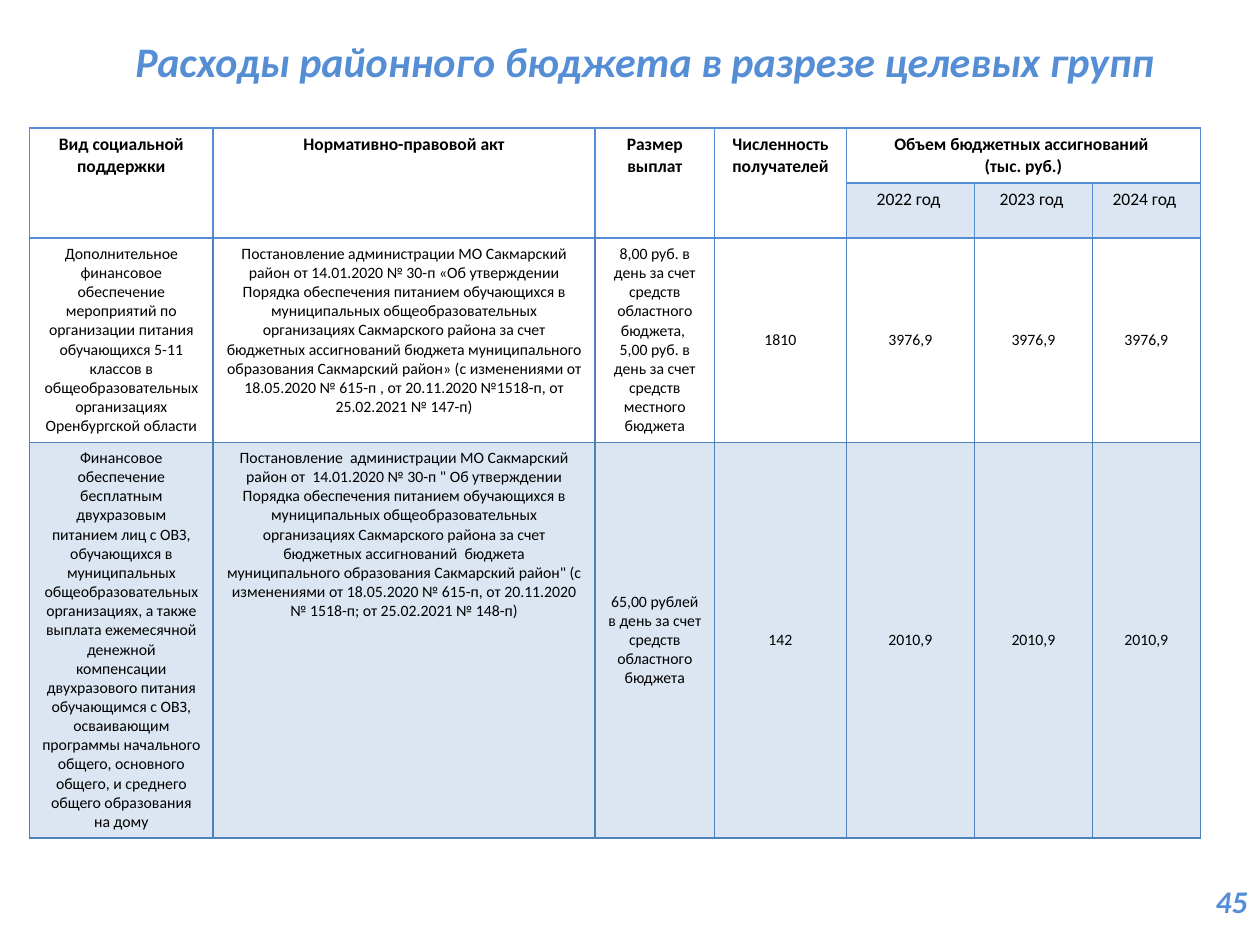
from lxml import etree
from pptx import Presentation
from pptx.dml.color import RGBColor
from pptx.enum import text
from pptx.oxml import ns
from pptx.util import Pt

ACCENT = RGBColor(0x55, 0x8E, 0xD5)
GRID = RGBColor(0x4F, 0x81, 0xBD)
BAND = RGBColor(0xDC, 0xE6, 0xF2)
BLACK = RGBColor(0, 0, 0)
TOP, MIDDLE = text.MSO_ANCHOR.TOP, text.MSO_ANCHOR.MIDDLE
CENTER, RIGHT = text.PP_ALIGN.CENTER, text.PP_ALIGN.RIGHT


def write(frame, content, size=10, color=BLACK, bold=False, italic=False,
          align=CENTER, anchor=TOP):
    frame.text = content
    frame.vertical_anchor = anchor
    for paragraph in frame.paragraphs:
        paragraph.alignment = align
        for run in paragraph.runs:
            font = run.font
            font.name, font.size = "Calibri", Pt(size)
            font.bold, font.italic = bold, italic
            font.color.rgb = color


def draw_borders(cell, color, top_color):
    properties = cell._tc.get_or_add_tcPr()
    sides = [("lnL", color), ("lnR", color), ("lnT", top_color), ("lnB", color)]
    for position, (side, side_color) in enumerate(sides):
        line = etree.Element(ns.qn(f"a:{side}"), w=str(Pt(1)))
        fill = etree.SubElement(line, ns.qn("a:solidFill"))
        etree.SubElement(fill, ns.qn("a:srgbClr"), val=str(side_color))
        properties.insert(position, line)


deck = Presentation()
deck.slide_width, deck.slide_height = Pt(720), Pt(540)
slide = deck.slides.add_slide(deck.slide_layouts[5])

# Title
title = slide.shapes.title
title.left, title.top, title.width, title.height = Pt(67.5), Pt(16.5), Pt(602), Pt(36)
write(title.text_frame, "Расходы районного бюджета в разрезе целевых групп",
      size=24, color=ACCENT, bold=True, italic=True, anchor=MIDDLE)
title.text_frame.word_wrap = False
title.text_frame.auto_size = text.MSO_AUTO_SIZE.NONE

# Table contents
headings = ["Вид социальной поддержки", "Нормативно-правовой акт", "Размер выплат",
            "Численность получателей", "Объем бюджетных ассигнований \n(тыс. руб.)"]
years = ["2022 год ", "2023 год ", "2024 год "]
measures = [
    ["Дополнительное финансовое обеспечение мероприятий по организации питания "
     "обучающихся 5-11 классов в общеобразовательных организациях Оренбургской области",
     "Постановление администрации МО Сакмарский район от 14.01.2020 № 30-п "
     "«Об утверждении Порядка обеспечения питанием обучающихся в муниципальных "
     "общеобразовательных организациях Сакмарского района за счет бюджетных "
     "ассигнований бюджета муниципального образования Сакмарский район» "
     "(с изменениями от 18.05.2020 № 615-п , от 20.11.2020 №1518-п, "
     "от 25.02.2021 № 147-п)",
     "8,00 руб. в день за счет средств областного бюджета, \n"
     "5,00 руб. в день за счет средств местного бюджета",
     "1810"] + ["3976,9"] * 3,
    ["Финансовое обеспечение бесплатным двухразовым питанием лиц с ОВЗ, обучающихся "
     "в муниципальных общеобразовательных организациях, а также выплата ежемесячной "
     "денежной компенсации двухразового питания обучающимся с ОВЗ, осваивающим "
     "программы начального общего, основного общего, и среднего общего образования "
     "на дому",
     "Постановление  администрации МО Сакмарский район от  14.01.2020 № 30-п "
     "\" Об утверждении Порядка обеспечения питанием обучающихся в муниципальных "
     "общеобразовательных организациях Сакмарского района за счет бюджетных "
     "ассигнований  бюджета муниципального образования Сакмарский район\" "
     "(с изменениями от 18.05.2020 № 615-п, от 20.11.2020 № 1518-п; "
     "от 25.02.2021 № 148-п)",
     "65,00 рублей в день за счет средств областного бюджета",
     "142"] + ["2010,9"] * 3,
]

# Table grid
widths = [104.8, 218.3, 68.3, 75.4, 73.2, 67.4, 61.7]
heights = [31.4, 31.4, 116.6, 226.2]
support = slide.shapes.add_table(len(heights), len(widths), Pt(16.9), Pt(73.1),
                                 Pt(sum(widths)), Pt(sum(heights))).table
for column, width in zip(support.columns, widths):
    column.width = Pt(width)
for row, height in zip(support.rows, heights):
    row.height = Pt(height)

# Fills and borders
for r in range(len(heights)):
    for c in range(len(widths)):
        cell = support.cell(r, c)
        if r == 3 or (r == 1 and c >= 4):
            cell.fill.solid()
            cell.fill.fore_color.rgb = BAND
        else:
            cell.fill.background()
        draw_borders(cell, ACCENT if r < 2 else GRID, ACCENT if r < 3 else GRID)

# Header rows
for c, heading in enumerate(headings):
    if c < 4:
        support.cell(0, c).merge(support.cell(1, c))
    write(support.cell(0, c).text_frame, heading, bold=True)
support.cell(0, 4).merge(support.cell(0, 6))
for c, year in enumerate(years, 4):
    write(support.cell(1, c).text_frame, year)

# Support measures
for r, measure in enumerate(measures, 2):
    for c, content in enumerate(measure):
        cell = support.cell(r, c)
        write(cell.text_frame, content, size=9)
        cell.vertical_anchor = TOP if c < 2 else MIDDLE

# Page number
page = slide.shapes.add_textbox(Pt(552), Pt(500.5), Pt(168), Pt(28.8)).text_frame
page.word_wrap = True
write(page, "45", size=18, color=ACCENT, bold=True, italic=True,
      align=RIGHT, anchor=MIDDLE)

deck.save("out.pptx")
